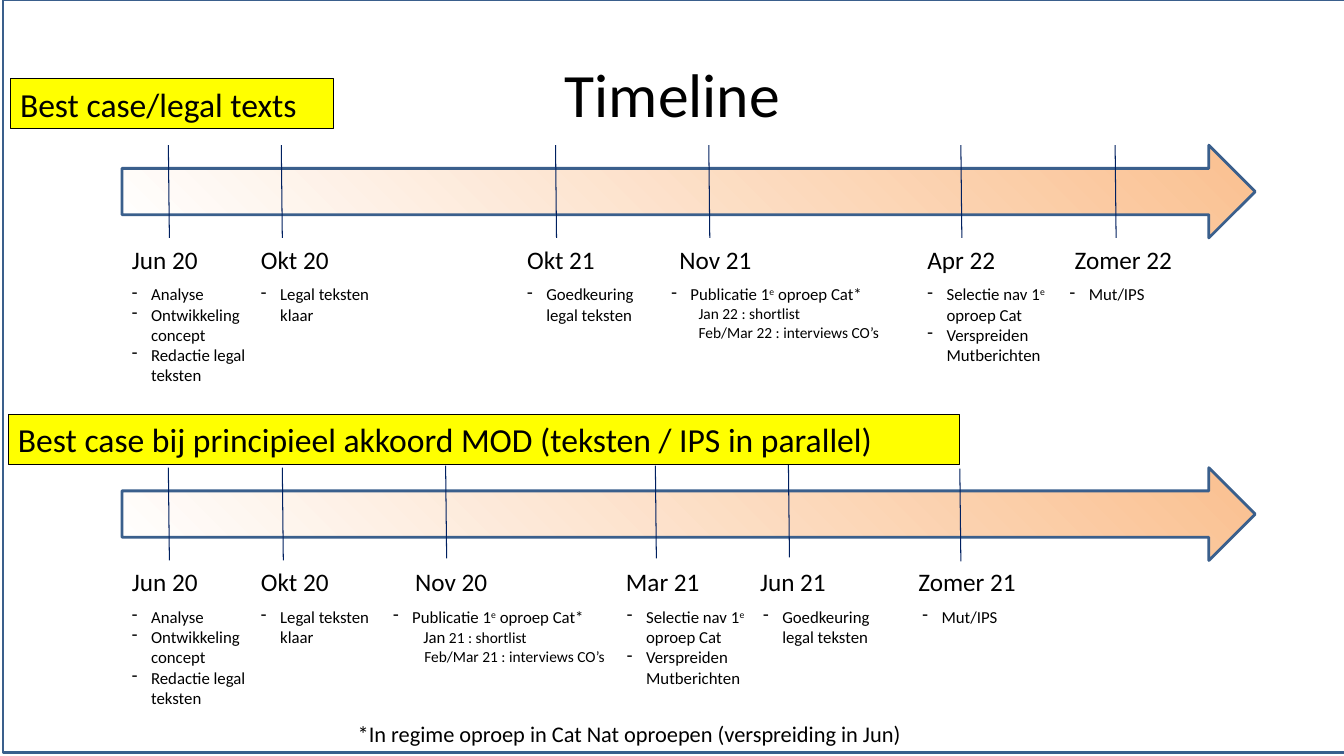
from pptx import Presentation
from pptx.dml.color import RGBColor
from pptx.enum.shapes import MSO_CONNECTOR as CONN, MSO_SHAPE as SHAPE
from pptx.enum.text import MSO_ANCHOR as ANCHOR, MSO_AUTO_SIZE as AUTO, PP_ALIGN as ALIGN
from pptx.oxml import parse_xml
from pptx.oxml.ns import nsdecls, qn
from pptx.util import Inches, Pt
from lxml import etree

# Content: a note is a bullet string, or (indent, runs with sizes) for a sub-line;
# "^e" marks a raised e
ANALYSIS = ["Analyse", "Ontwikkeling concept", "Redactie legal teksten"]
LEGAL = ["Legal teksten klaar"]
APPROVAL = ["Goedkeuring legal teksten"]
CALL = "Publicatie 1^e oproep Cat*"
SELECTION = ["Selectie nav 1^e oproep Cat", "Verspreiden Mutberichten"]
MOVE = ["Mut/IPS"]
CALL_21 = [CALL, (0.27, [("Jan 22 : shortlist", 11)]),
           (0.27, [("Feb/Mar 22 : interviews CO’s", 11)])]
CALL_20 = [CALL, (0.3, [("Jan", 12), (" 21 : shortlist", 11)]),
           (0.31, [("Feb/Mar 21 : interviews CO’s", 11)])]

# Each event: date, (date left, width), (tick left, top), (notes left, width, height), notes
TIMELINES = [
    (1.44, "Best case/legal texts", (0.1, 0.78, 3.21, 0.5), [
        ("Jun 20", (1.21, 1.06), (1.67, 1.44), (1.21, 1.39, 1.31), ANALYSIS),
        ("Okt 20", (2.49, 0.96), (2.79, 1.44), (2.49, 1.29, 0.5), LEGAL),
        ("Okt 21", (5.13, 0.96), (5.51, 1.44), (5.13, 1.5, 0.5), APPROVAL),
        ("Nov 21", (6.64, 0.96), (7.03, 1.44), (6.56, 2.54, 0.67), CALL_21),
        ("Apr 22", (9.1, 1.1), (9.53, 1.44), (9.1, 1.47, 0.91), SELECTION),
        ("Zomer 22", (10.56, 1.47), (11.06, 1.44), (10.51, 1.32, 0.3), MOVE),
    ]),
    (4.64, "Best case bij principieel akkoord MOD (teksten / IPS in parallel)",
     (0.08, 4.11, 9.44, 0.5), [
        ("Jun 20", (1.21, 1.05), (1.67, 4.64), (1.21, 1.39, 1.31), ANALYSIS),
        ("Okt 20", (2.49, 0.96), (2.8, 4.64), (2.49, 1.29, 0.5), LEGAL),
        ("Nov 20", (4.02, 0.96), (4.42, 4.62), (3.8, 2.54, 0.69), CALL_20),
        ("Mar 21", (6.11, 1.1), (6.5, 4.62), (6.12, 1.47, 0.91), SELECTION),
        ("Jun 21", (7.44, 0.96), (7.82, 4.61), (7.47, 1.55, 0.5), APPROVAL),
        ("Zomer 21", (9.01, 1.47), (9.52, 4.65), (9.05, 1.32, 0.3), MOVE),
    ]),
]
FOOTNOTE = "*In regime oproep in Cat Nat oproepen (verspreiding in Jun)"
ARROW_H, DATE_DY, NOTES_DY = 0.92, 0.93, 1.33
HANG = Inches(0.19)
GRADIENT = f"""<a:gradFill {nsdecls('a')} rotWithShape="1"><a:gsLst>
<a:gs pos="0"><a:srgbClr val="FAC090"/></a:gs>
<a:gs pos="0"><a:srgbClr val="FFFFFF"/></a:gs>
<a:gs pos="100000"><a:srgbClr val="FAC090"/></a:gs></a:gsLst>
<a:path path="circle"><a:fillToRect t="100000" r="100000"/></a:path></a:gradFill>"""

prs = Presentation()
prs.slide_width, prs.slide_height = Inches(13.33), Inches(7.5)
slide = prs.slides.add_slide(prs.slide_layouts[5])
shapes = slide.shapes


def color(value):
    return RGBColor.from_string(value)


def box(at):
    return [Inches(v) for v in at]


def add_run(p, text, size, raised=False):
    r = p.add_run()
    r.text = text
    r.font.size, r.font.name = Pt(size), "Calibri"
    r.font.color.rgb = color("000000")
    if raised:
        r.font._element.set("baseline", "30000")


def add_block(kind, at, fill, line, width):
    sp = shapes.add_shape(kind, *box(at))
    sp.shadow.inherit = False
    sp.fill.solid()
    sp.fill.fore_color.rgb = color(fill)
    sp.line.color.rgb = color(line)
    sp.line.width = Pt(width)
    return sp


def fit_frame(sp):
    tf = sp.text_frame
    tf.word_wrap = True
    tf.auto_size = AUTO.SHAPE_TO_FIT_TEXT
    tf.vertical_anchor = ANCHOR.TOP
    return tf


def add_label(at, text, size):
    tf = fit_frame(shapes.add_textbox(*box(at)))
    add_run(tf.paragraphs[0], text, size)


def add_notes(at, notes):
    tf = fit_frame(shapes.add_textbox(*box(at)))
    for i, note in enumerate(notes):
        p = tf.add_paragraph() if i else tf.paragraphs[0]
        pPr = p._p.get_or_add_pPr()
        if isinstance(note, str):
            pPr.set("marL", str(HANG))
            pPr.set("indent", str(-HANG))
            etree.SubElement(pPr, qn("a:buChar")).set("char", "-")
            before, mark, after = note.partition("^e")
            add_run(p, before, 12)
            if mark:
                add_run(p, "e", 12, raised=True)
                add_run(p, after, 12)
        else:
            indent, runs = note
            pPr.set("marL", str(Inches(indent)))
            pPr.set("indent", "0")
            for text, size in runs:
                add_run(p, text, size)


def add_arrow(top):
    sp = add_block(SHAPE.RIGHT_ARROW, (1.21, top, 11.24, ARROW_H), "FFFFFF", "3A5F8C", 2)
    spPr = sp._element.spPr
    spPr.replace(spPr.find(qn("a:solidFill")), parse_xml(GRADIENT))


def add_tick(left, top):
    ln = shapes.add_connector(CONN.STRAIGHT, *box((left, top, left + 0.01, top + ARROW_H)))
    ln.line.color.rgb = color("002060")
    ln.line.width = Pt(0.75)
    etree.SubElement(ln._element.spPr, qn("a:effectLst"))


# Frame, placed behind the title
frame = add_block(SHAPE.RECTANGLE, (0.03, 0, 13.31, 7.47), "FFFFFF", "3A5F8C", 2)
title = shapes.title
title._element.addprevious(frame._element)

# Title
title.left, title.top, title.width, title.height = box((0.67, 0.3, 12, 1.25))
title.text_frame.vertical_anchor = ANCHOR.MIDDLE
p = title.text_frame.paragraphs[0]
p.alignment = ALIGN.CENTER
add_run(p, "Timeline", 44)

# Timelines
for top, banner, banner_at, events in TIMELINES:
    add_arrow(top)
    for date, (left, width), tick, (notes_left, notes_w, notes_h), notes in events:
        add_label((left, top + DATE_DY, width, 0.4), date, 18)
        add_notes((notes_left, top + NOTES_DY, notes_w, notes_h), notes)
        add_tick(*tick)
    sp = add_block(SHAPE.RECTANGLE, banner_at, "FFFF00", "000000", 0.75)
    p = fit_frame(sp).paragraphs[0]
    p.alignment = ALIGN.LEFT
    add_run(p, banner, 24)

# Footnote
add_label((3.45, 7.1, 6.06, 0.37), FOOTNOTE, 16)

prs.save("out.pptx")
